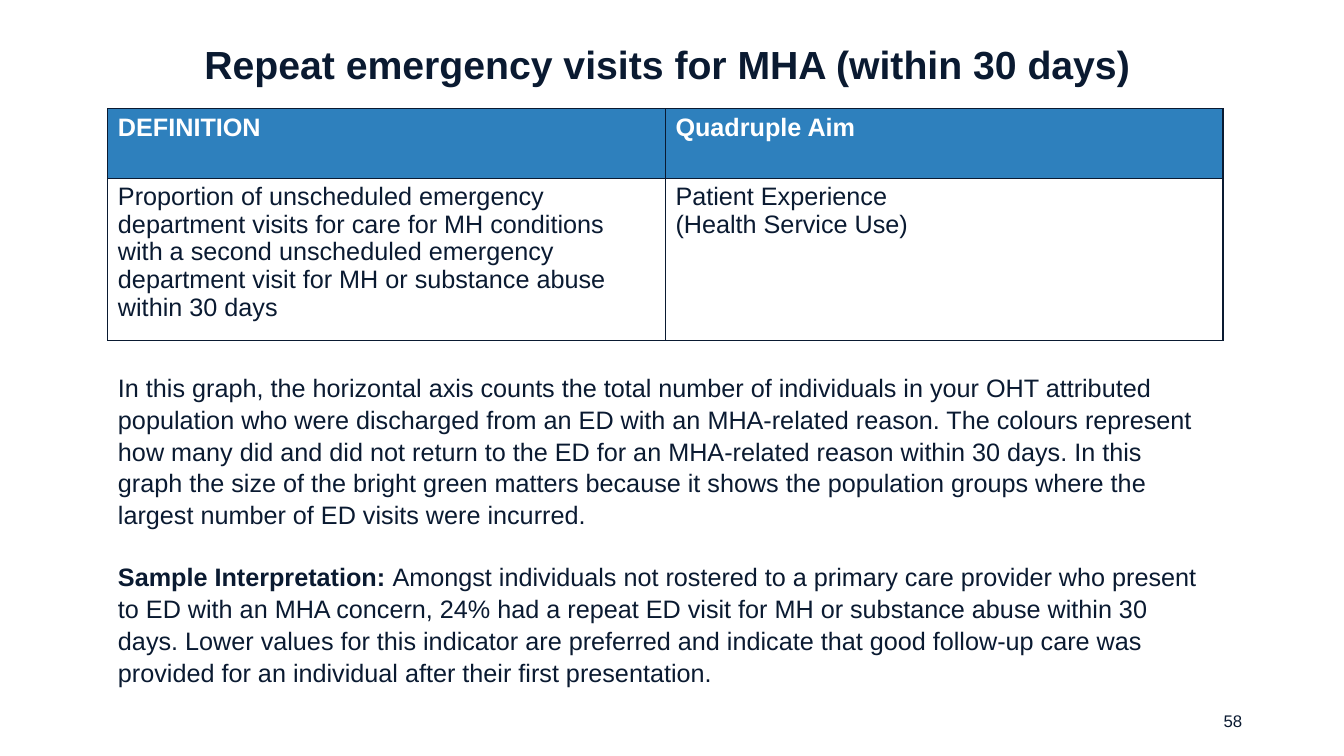
import pptx
import pptx.util
import pptx.dml.color
import pptx.enum.text
import pptx.oxml.ns
from lxml import etree

Inches = pptx.util.Inches
Align = pptx.enum.text.PP_ALIGN
Anchor = pptx.enum.text.MSO_ANCHOR
qn = pptx.oxml.ns.qn

theme = {
    "font": "Arial",
    "ink": "0A1A31", "white": "FFFFFF", "blue": "2E80BD",
    "title": 28, "text": 18, "small": 12,
}


def write(para, text, size="text", color="ink", bold=False, **layout):
    """Add a styled run and set the given paragraph attributes."""
    for name, value in layout.items():
        setattr(para, name, value)
    run = para.add_run()
    run.text = text
    look = {"name": theme["font"], "size": pptx.util.Pt(theme[size]), "bold": bold}
    for name, value in look.items():
        setattr(run.font, name, value)
    run.font.color.rgb = pptx.dml.color.RGBColor.from_string(theme[color])


def place(shape, left, top, width, height):
    box = {"left": left, "top": top, "width": width, "height": height}
    for name, value in box.items():
        setattr(shape, name, Inches(value))


deck = pptx.Presentation()
deck.slide_width = Inches(13.33)
deck.slide_height = Inches(7.5)
slide = deck.slides.add_slide(deck.slide_layouts[1])
left, width = 1.07, 11.06

# Title
title = slide.shapes.title
place(title, 0.77, 0.24, 11.8, 0.84)
title.text_frame.vertical_anchor = Anchor.MIDDLE
write(title.text_frame.paragraphs[0],
      "Repeat emergency visits for MHA (within 30 days) ",
      "title", bold=True, alignment=Align.CENTER, line_spacing=0.9)

# Definition table
rows = [
    [["DEFINITION"], ["Quadruple Aim"]],
    [["Proportion of unscheduled emergency department visits for care for MH "
      "conditions with a second unscheduled emergency department visit for MH "
      "or substance abuse within 30 days"],
     ["Patient Experience", "(Health Service Use)"]],
]
looks = [{"color": "white", "bold": True}, {"color": "ink"}]
fills = ["blue", "white"]
heights = [0.69, 1.61]

table = slide.shapes.add_table(
    2, 2, Inches(left), Inches(1.08), Inches(width), Inches(sum(heights))).table
for r, row in enumerate(rows):
    table.rows[r].height = Inches(heights[r])
    for c, lines in enumerate(row):
        cell = table.cell(r, c)
        props = cell._tc.get_or_add_tcPr()
        for side in ("a:lnL", "a:lnR", "a:lnT", "a:lnB"):
            edge = etree.SubElement(props, qn(side), w=str(pptx.util.Pt(1)))
            paint = etree.SubElement(edge, qn("a:solidFill"))
            etree.SubElement(paint, qn("a:srgbClr"), val=theme["ink"])
        cell.fill.solid()
        cell.fill.fore_color.rgb = pptx.dml.color.RGBColor.from_string(theme[fills[r]])
        frame = cell.text_frame
        for i, line in enumerate(lines):
            para = frame.add_paragraph() if i else frame.paragraphs[0]
            write(para, line, line_spacing=0.98, **looks[r])

# Explanation
body = slide.placeholders[1]
place(body, left, 3.63, width, 3.13)
frame = body.text_frame
frame.auto_size = pptx.enum.text.MSO_AUTO_SIZE.NONE
notes = [
    [("In this graph, the horizontal axis counts the total number of individuals "
      "in your OHT attributed population who were discharged from an ED with an "
      "MHA-related reason. The colours represent how many did and did not return "
      "to the ED for an MHA-related reason within 30 days. In this graph the size "
      "of the bright green matters because it shows the population groups where "
      "the largest number of ED visits were incurred.", False)],
    [("Sample Interpretation: ", True),
     ("Amongst individuals not rostered to a primary care provider who present to "
      "ED with an MHA concern, 24% had a repeat ED visit for MH or substance abuse "
      "within 30 days. Lower values for this indicator are preferred and indicate "
      "that good follow-up care was provided for an individual after their first "
      "presentation.", False)],
]
for i, parts in enumerate(notes):
    para = frame.add_paragraph() if i else frame.paragraphs[0]
    props = para._p.get_or_add_pPr()
    props.set("marL", "0")
    props.set("indent", "0")
    etree.SubElement(props, qn("a:buNone"))
    gap = pptx.util.Pt(21.7 if i else 0)
    for text, bold in parts:
        write(para, text, bold=bold, line_spacing=1.05, space_before=gap)

# Slide number
number = slide.shapes.add_textbox(Inches(9.42), Inches(6.95), Inches(3), Inches(0.4))
number.text_frame.word_wrap = True
number.text_frame.vertical_anchor = Anchor.MIDDLE
write(number.text_frame.paragraphs[0], "58", "small", alignment=Align.RIGHT)

deck.save("out.pptx")
